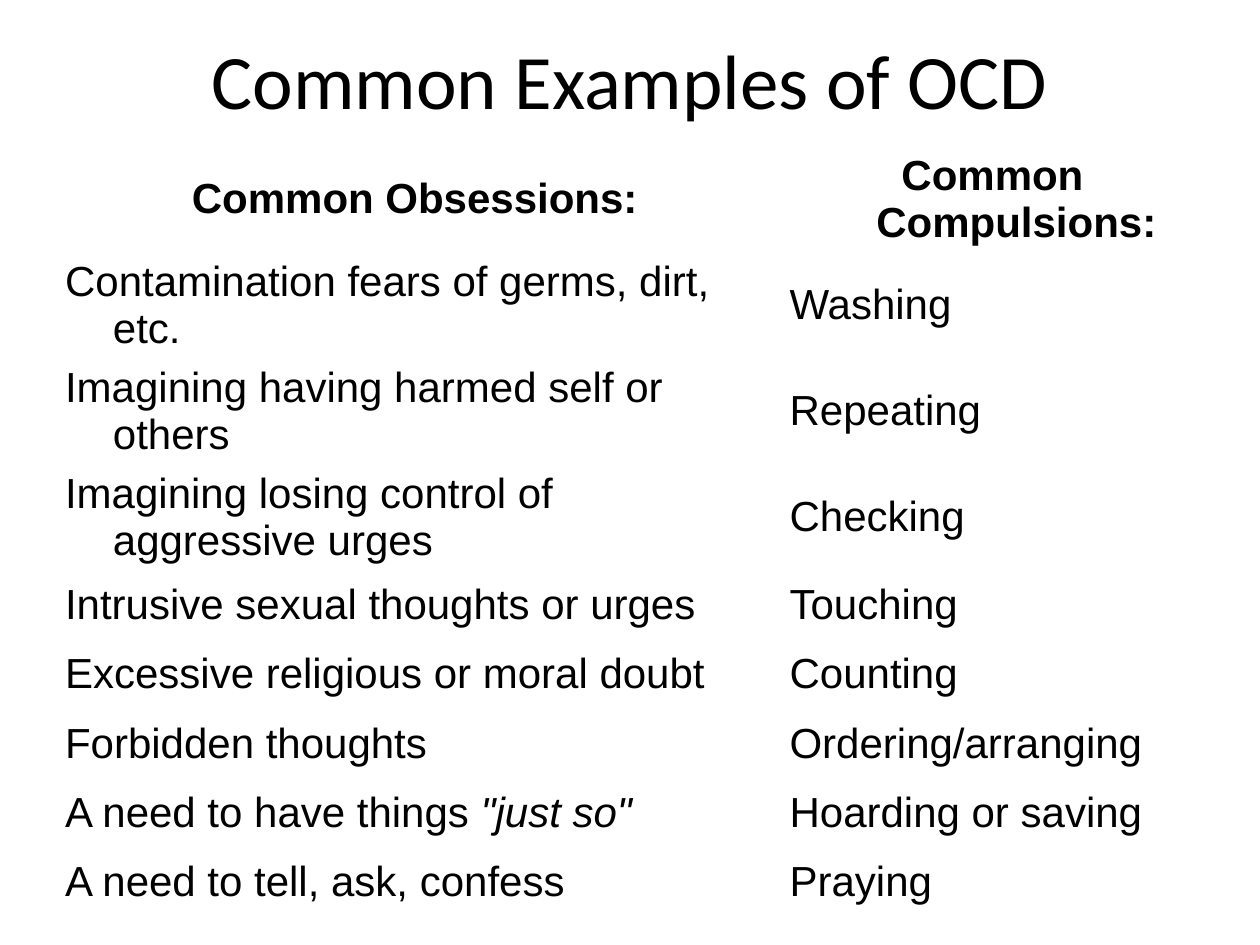
"""Build the slide that lists common obsessions and compulsions."""
from dataclasses import dataclass

from pptx import Presentation
from pptx.dml.color import RGBColor as RGB
from pptx.enum.text import MSO_ANCHOR as Anchor, PP_ALIGN as Align
from pptx.util import Inches, Pt


@dataclass(frozen=True)
class Theme:
    """Colours, fonts and type sizes."""
    ink: RGB = RGB(0, 0, 0)
    title_font: str = "Calibri"
    body_font: str = "Arial"
    title_size: int = 44
    body_size: int = 24


THEME = Theme()
WIDTH, HEIGHT = 10, 7.5
COLUMNS = (5.75, 3.42)
ROW = 0.55
INDENT = 0.38
CELL_MARGIN = Pt(1.5)
TITLE = "Common Examples of OCD"
HEADS = [("Common Obsessions:",), ("Common Compulsions:",)]
EXAMPLES = [
    [("Contamination fears of germs, dirt, etc.",), ("Washing",)],
    [("Imagining having harmed self or others",), ("Repeating",)],
    [("Imagining losing control of aggressive urges",), ("Checking",)],
    [("Intrusive sexual thoughts or urges",), ("Touching",)],
    [("Excessive religious or moral doubt",), ("Counting",)],
    [("Forbidden thoughts",), ("Ordering/arranging",)],
    [("A need to have things ", '"just so"'), ("Hoarding or saving",)],
    [("A need to tell, ask, confess",), ("Praying",)],
]


def set_font(p, name, size, bold=False):
    """Set the font of a whole paragraph."""
    p.font.name, p.font.size, p.font.bold = name, Pt(size), bold
    p.font.color.rgb = THEME.ink


def add_title(s, text):
    """Add the centred title across the top sixth of the slide."""
    sp = s.shapes.add_textbox(Inches(WIDTH * 0.05), 0,
                              Inches(WIDTH * 0.9), Inches(HEIGHT / 6))
    tf = sp.text_frame
    tf.word_wrap, tf.vertical_anchor = True, Anchor.MIDDLE
    p = tf.paragraphs[0]
    p.text, p.alignment = text, Align.CENTER
    set_font(p, THEME.title_font, THEME.title_size)


def fill_cell(cell, runs, head):
    """Write a cell with a hanging indent; a second run is italic."""
    cell.fill.background()
    cell.vertical_anchor = Anchor.MIDDLE
    cell.margin_top = cell.margin_bottom = CELL_MARGIN
    p = cell.text_frame.paragraphs[0]
    p.alignment = Align.CENTER if head else Align.LEFT
    pPr = p._p.get_or_add_pPr()
    pPr.set("marL", str(Inches(INDENT)))
    pPr.set("indent", str(-Inches(INDENT)))
    set_font(p, THEME.body_font, THEME.body_size, head)
    for i, text in enumerate(runs):
        r = p.add_run()
        r.text = text
        if i:
            r.font.italic = True


def add_examples(s, rows):
    """Add the plain table whose first row holds the headings."""
    frame = s.shapes.add_table(len(rows), len(COLUMNS), Inches(WIDTH / 24), Inches(1.16),
                               Inches(sum(COLUMNS)), Inches(ROW * len(rows)))
    table = frame.table
    table.first_row = table.horz_banding = False
    for column, width in zip(table.columns, COLUMNS):
        column.width = Inches(width)
    for i, (row, texts) in enumerate(zip(table.rows, rows)):
        row.height = Inches(ROW)
        for cell, runs in zip(row.cells, texts):
            fill_cell(cell, runs, head=i == 0)


def main():
    """Build and save the slide."""
    prs = Presentation()
    prs.slide_width, prs.slide_height = Inches(WIDTH), Inches(HEIGHT)
    s = prs.slides.add_slide(prs.slide_layouts[6])
    add_title(s, TITLE)
    add_examples(s, [HEADS, *EXAMPLES])
    prs.save("out.pptx")


if __name__ == "__main__":
    main()
